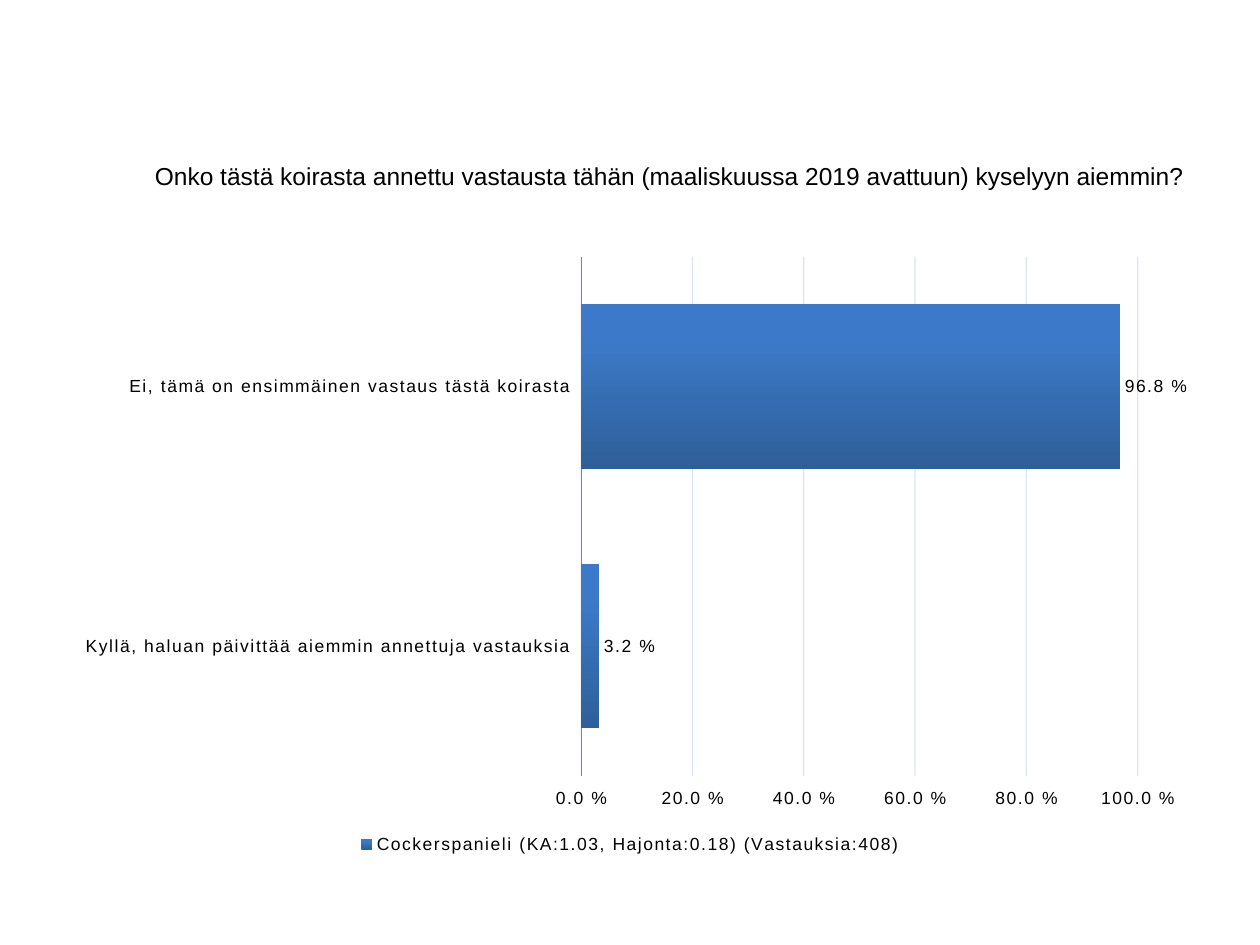
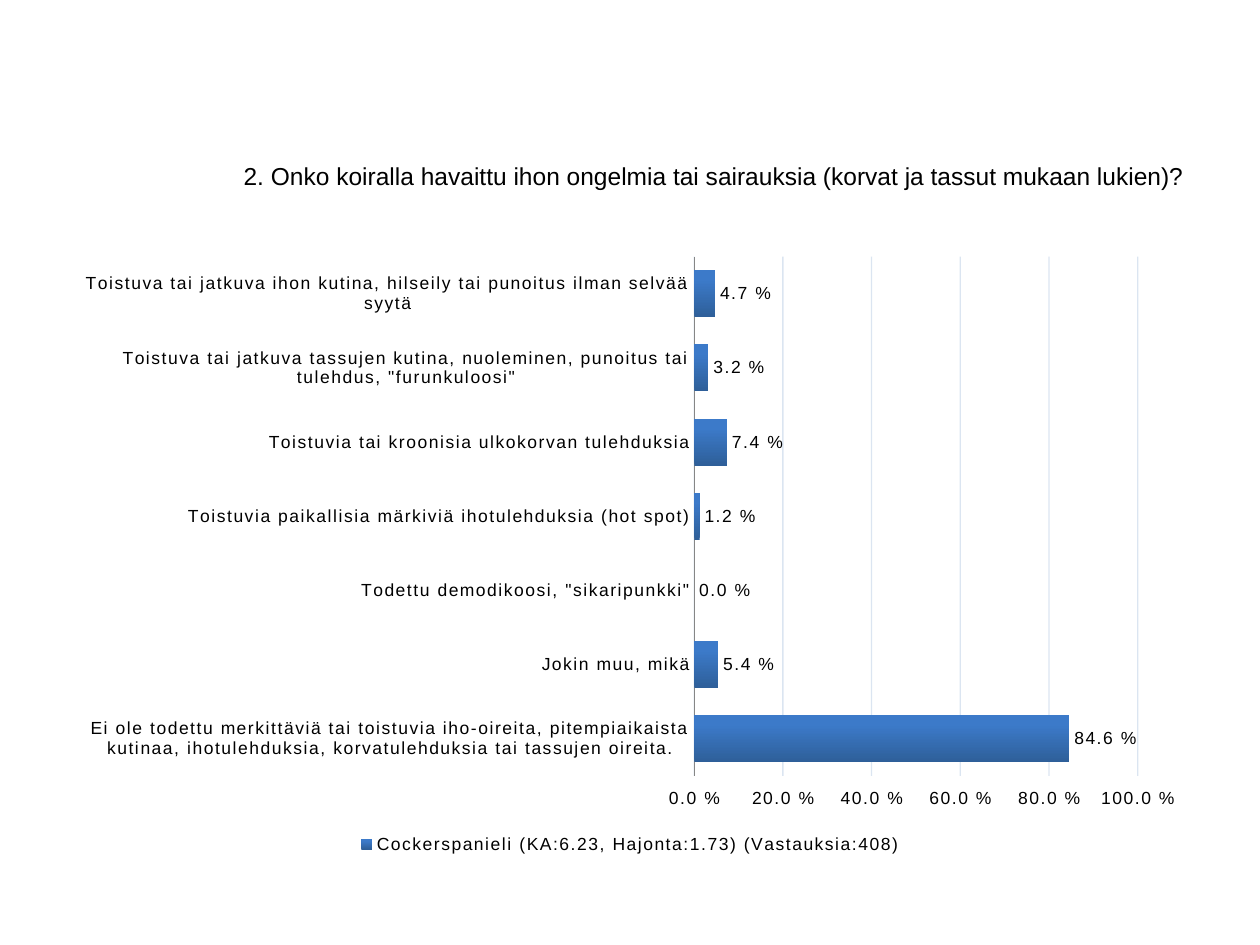
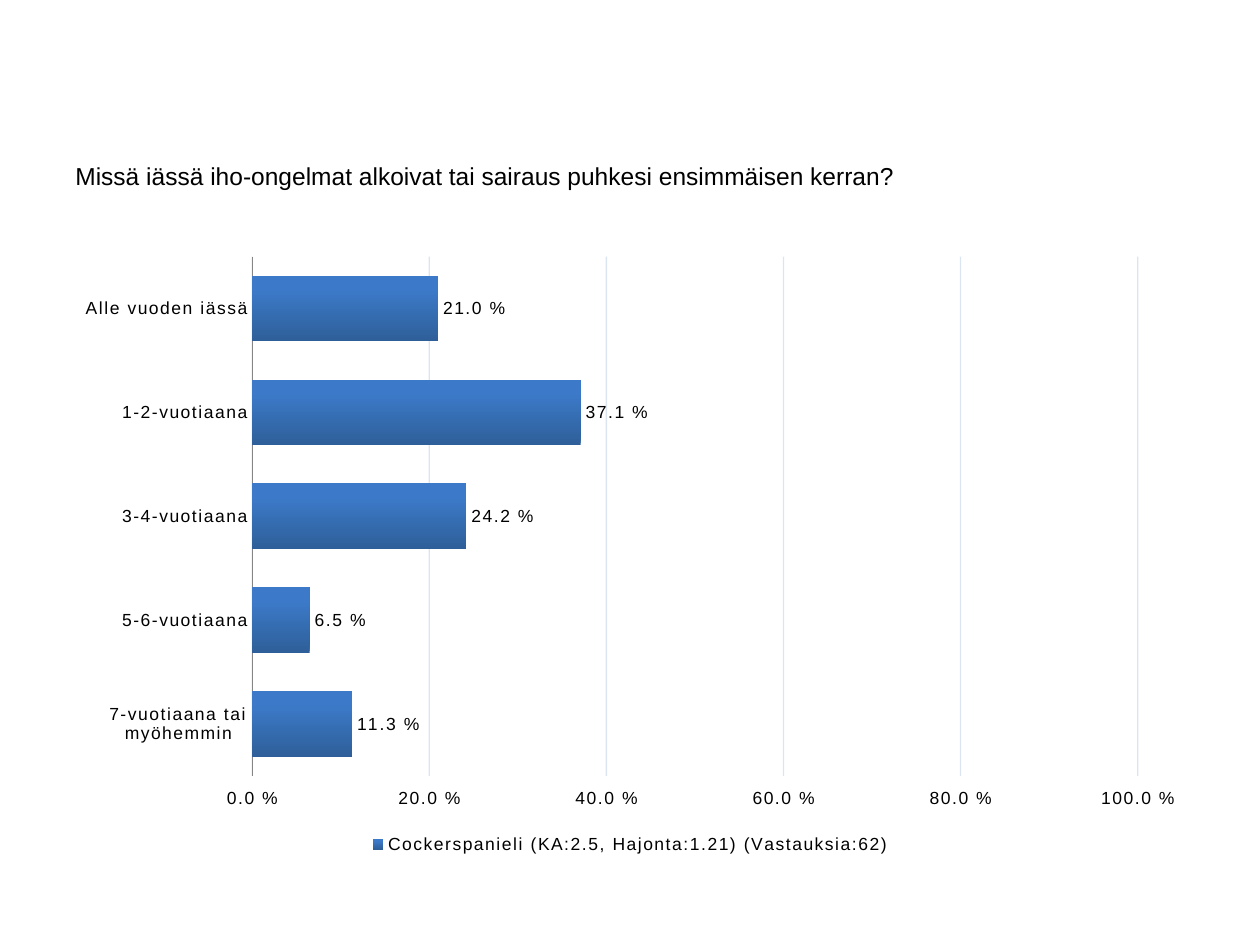
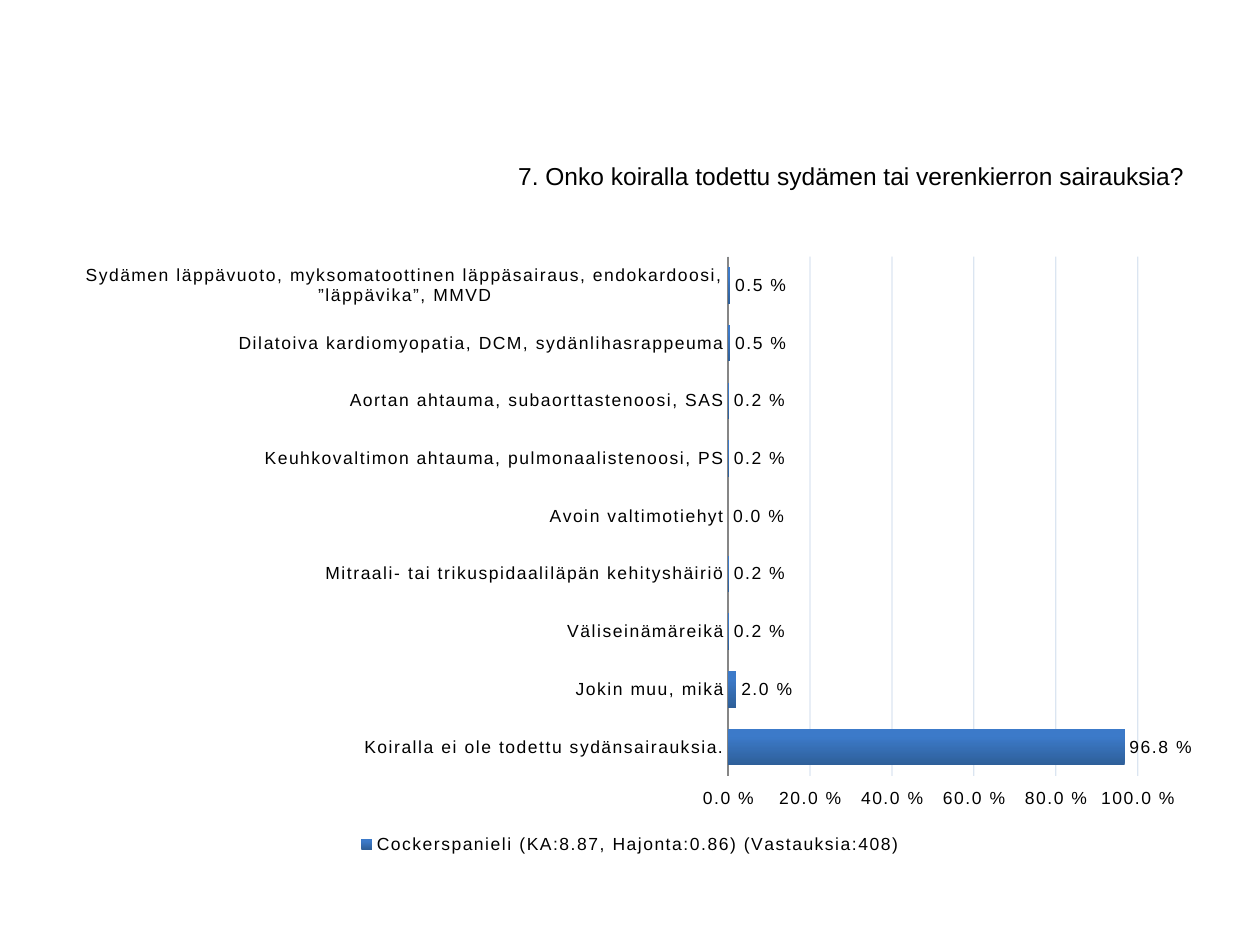
from collections import namedtuple
from dataclasses import dataclass

from lxml.etree import SubElement
from pptx import Presentation
from pptx.chart.data import CategoryChartData as ChartData
from pptx.dml.color import RGBColor as Color
from pptx.enum.chart import XL_CHART_TYPE as ChartType
from pptx.enum.chart import XL_LABEL_POSITION as LabelPosition
from pptx.enum.chart import XL_LEGEND_POSITION as LegendPosition
from pptx.enum.chart import XL_TICK_LABEL_POSITION as TickLabelPosition
from pptx.enum.chart import XL_TICK_MARK as TickMark
from pptx.enum.text import PP_ALIGN as Align
from pptx.oxml.ns import qn
from pptx.util import Pt

Box = namedtuple("Box", "left top width height")
Question = namedtuple("Question", "title align series answers")


@dataclass(frozen=True)
class Theme:
    """Colours, type and number formats shared by every page."""

    font: str = "Arial"
    title_size: int = 14
    chart_size: int = 10
    letter_spacing: int = 100
    text: str = "000000"
    axis: str = "868686"
    grid: str = "4F81BD"
    grid_alpha: int = 20
    bar_stops: tuple = ((0, "2E5F99"), (0.8, "3C7AC9"))
    percent: str = r"0.0\ %"


THEME = Theme()
PAGE = Box(0, 0, 720, 540)
CONTENT = Box(36, 88.5, 648, 402.5)
TITLE_HEIGHT = 42.5
CHART_OFFSET = 51.2

QUESTIONS = (
    Question(
        "Onko tästä koirasta annettu vastausta tähän (maaliskuussa 2019 avattuun) kyselyyn aiemmin?",
        Align.RIGHT,
        "Cockerspanieli (KA:1.03, Hajonta:0.18) (Vastauksia:408)",
        {
            "Ei, tämä on ensimmäinen vastaus tästä koirasta ": 0.968,
            "Kyllä, haluan päivittää aiemmin annettuja vastauksia ": 0.032,
        },
    ),
    Question(
        "2. Onko koiralla havaittu ihon ongelmia tai sairauksia (korvat ja tassut mukaan lukien)?",
        Align.RIGHT,
        "Cockerspanieli (KA:6.23, Hajonta:1.73) (Vastauksia:408)",
        {
            "Toistuva tai jatkuva ihon kutina, hilseily tai punoitus ilman selvää syytä": 0.047,
            'Toistuva tai jatkuva tassujen kutina, nuoleminen, punoitus tai tulehdus, "furunkuloosi"': 0.032,
            "Toistuvia tai kroonisia ulkokorvan tulehduksia": 0.074,
            "Toistuvia paikallisia märkiviä ihotulehduksia (hot spot)": 0.012,
            'Todettu demodikoosi, "sikaripunkki"': 0,
            "Jokin muu, mikä": 0.054,
            "Ei ole todettu merkittäviä tai toistuvia iho-oireita, pitempiaikaista kutinaa, "
            "ihotulehduksia, korvatulehduksia tai tassujen oireita.": 0.846,
        },
    ),
    Question(
        "Missä iässä iho-ongelmat alkoivat tai sairaus puhkesi ensimmäisen kerran?",
        Align.LEFT,
        "Cockerspanieli (KA:2.5, Hajonta:1.21) (Vastauksia:62)",
        {
            "Alle vuoden iässä": 0.21,
            "1-2-vuotiaana": 0.371,
            "3-4-vuotiaana": 0.242,
            "5-6-vuotiaana": 0.065,
            "7-vuotiaana tai myöhemmin": 0.113,
        },
    ),
    Question(
        "7. Onko koiralla todettu sydämen tai verenkierron sairauksia?",
        Align.RIGHT,
        "Cockerspanieli (KA:8.87, Hajonta:0.86) (Vastauksia:408)",
        {
            "Sydämen läppävuoto, myksomatoottinen läppäsairaus, endokardoosi, ”läppävika”, MMVD": 0.005,
            "Dilatoiva kardiomyopatia, DCM, sydänlihasrappeuma": 0.005,
            "Aortan ahtauma, subaorttastenoosi, SAS": 0.002,
            "Keuhkovaltimon ahtauma, pulmonaalistenoosi, PS": 0.002,
            "Avoin valtimotiehyt": 0,
            "Mitraali- tai trikuspidaaliläpän kehityshäiriö": 0.002,
            "Väliseinämäreikä": 0.002,
            "Jokin muu, mikä": 0.02,
            "Koiralla ei ole todettu sydänsairauksia.": 0.968,
        },
    ),
)


def points(box):
    """Return the four sides of a box as lengths."""
    return [Pt(side) for side in box]


def format_font(font, size):
    """Give a font the shared face and text colour."""
    font.name = THEME.font
    font.size = Pt(size)
    font.color.rgb = Color.from_string(THEME.text)


def add_text(page, box, text, *, size, align):
    """Write one paragraph in a wrapped text box."""
    frame = page.shapes.add_textbox(*points(box)).text_frame
    frame.word_wrap = True
    para = frame.paragraphs[0]
    para.alignment = align
    span = para.add_run()
    span.text = text
    format_font(span.font, size)


def format_line(line, color):
    """Make a thin solid line."""
    line.width = Pt(0.75)
    line.color.rgb = Color.from_string(color)


def format_axes(chart):
    """List answers from the top, with a percentage scale below."""
    answers, scale = chart.category_axis, chart.value_axis
    for axis in (answers, scale):
        axis.major_tick_mark = axis.minor_tick_mark = TickMark.NONE
        format_font(axis.tick_labels.font, THEME.chart_size)
    answers.reverse_order = True
    format_line(answers.format.line, THEME.axis)
    scale.minimum_scale, scale.maximum_scale, scale.major_unit = 0, 1, 0.2
    scale.tick_label_position = TickLabelPosition.HIGH
    scale.tick_labels.number_format = THEME.percent
    scale.tick_labels.number_format_is_linked = False
    scale.format.line.fill.background()
    scale.has_major_gridlines = True
    format_line(scale.major_gridlines.format.line, THEME.grid)
    grid = next(chart.element.iter(qn("c:majorGridlines")))
    color = next(grid.iter(qn("a:srgbClr")))
    SubElement(color, qn("a:alpha")).set("val", str(THEME.grid_alpha * 1000))


def format_bars(plot):
    """Shade the bars and label each with its share."""
    plot.gap_width = 58
    plot.vary_by_categories = False
    fill = plot.series[0].format.fill
    fill.gradient()
    fill.gradient_angle = 90
    for stop, (position, color) in zip(fill.gradient_stops, THEME.bar_stops):
        stop.position = position
        stop.color.rgb = Color.from_string(color)
    labels = plot.series[0].data_labels
    labels.show_value = True
    labels.position = LabelPosition.OUTSIDE_END
    labels.number_format = THEME.percent
    labels.number_format_is_linked = False
    format_font(labels.font, THEME.chart_size)


def add_answer_chart(page, box, question):
    """Draw the shares of the answers as horizontal bars."""
    data = ChartData(number_format=THEME.percent)
    data.categories = question.answers.keys()
    data.add_series(question.series, question.answers.values())
    chart = page.shapes.add_chart(ChartType.BAR_CLUSTERED, *points(box), data).chart
    chart.has_title = False
    format_font(chart.font, THEME.chart_size)
    format_axes(chart)
    format_bars(chart.plots[0])
    chart.has_legend = True
    chart.legend.position = LegendPosition.BOTTOM
    chart.legend.include_in_layout = False
    format_font(chart.legend.font, THEME.chart_size)
    for properties in chart.element.iter(qn("a:defRPr")):
        properties.set("spc", str(THEME.letter_spacing))


def add_question(page, box, question):
    """Place a question title above its chart."""
    title = box._replace(height=TITLE_HEIGHT)
    chart = box._replace(top=box.top + CHART_OFFSET, height=box.height - CHART_OFFSET)
    add_text(page, title, question.title, size=THEME.title_size, align=question.align)
    add_answer_chart(page, chart, question)


def main():
    """Build one page for each question."""
    deck = Presentation()
    deck.slide_width, deck.slide_height = Pt(PAGE.width), Pt(PAGE.height)
    for question in QUESTIONS:
        add_question(deck.slides.add_slide(deck.slide_layouts[6]), CONTENT, question)
    deck.save("out.pptx")


if __name__ == "__main__":
    main()
